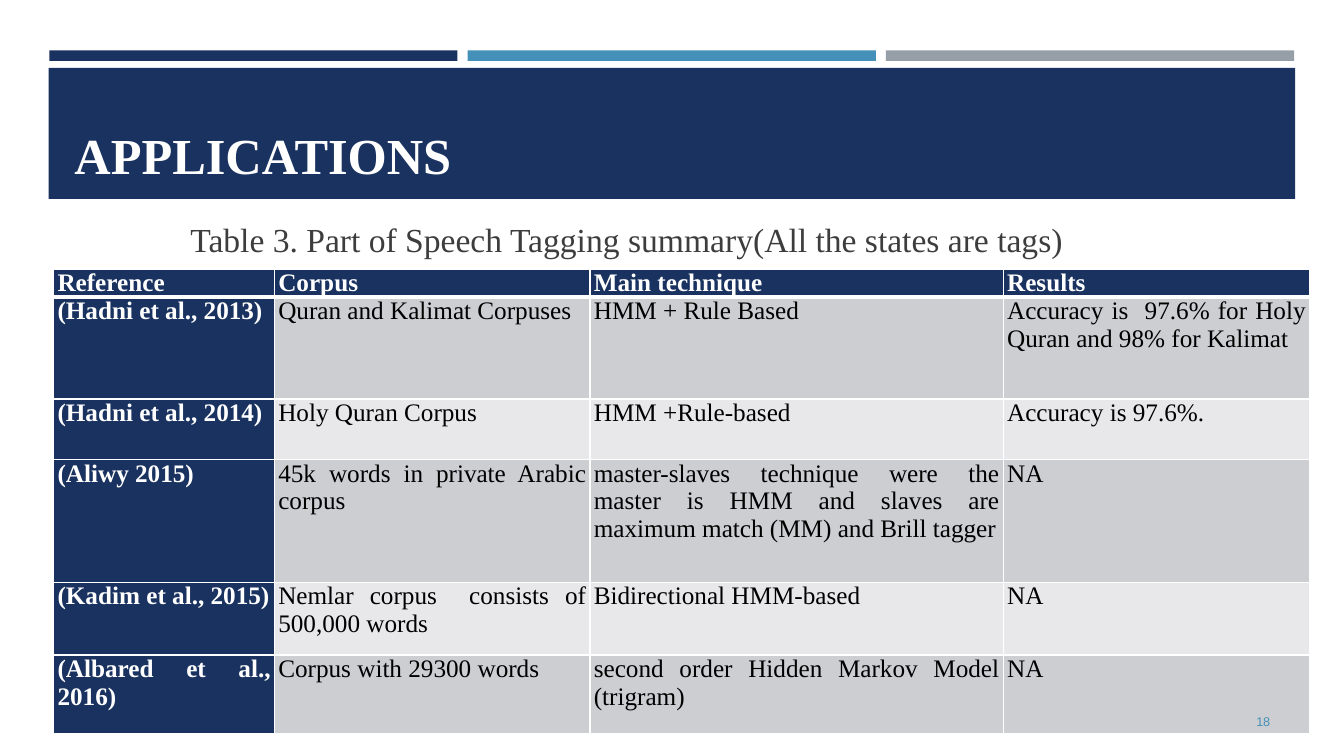
"""Build the slide that summarises part-of-speech tagging applications."""
from dataclasses import dataclass

import pptx
import pptx.dml.color
import pptx.enum.shapes
import pptx.enum.text
import pptx.oxml
import pptx.oxml.ns
import pptx.presentation
import pptx.slide
import pptx.table
import pptx.text.text
import pptx.util

Pt = pptx.util.Pt
RGBColor = pptx.dml.color.RGBColor
Align = pptx.enum.text.PP_ALIGN
Anchor = pptx.enum.text.MSO_ANCHOR

NAVY = RGBColor(0x1A, 0x32, 0x60)
BLUE = RGBColor(0x45, 0x90, 0xB8)
GREY = RGBColor(0x96, 0x9F, 0xA7)
DARK_GREY = RGBColor(0x3D, 0x3D, 0x3D)
BAND_DARK = RGBColor(0xCD, 0xCE, 0xD2)
BAND_LIGHT = RGBColor(0xE8, 0xE8, 0xEA)
WHITE = RGBColor(0xFF, 0xFF, 0xFF)
BLACK = RGBColor(0, 0, 0)
SERIF = "Times New Roman"


@dataclass(frozen=True)
class Box:
    """Position and size in points."""

    left: float
    top: float
    width: float
    height: float

    def lengths(self) -> tuple[pptx.util.Length, ...]:
        """Return the four values as lengths."""
        return Pt(self.left), Pt(self.top), Pt(self.width), Pt(self.height)


@dataclass(frozen=True)
class Block:
    """A filled rectangle."""

    box: Box
    color: RGBColor


STRIPE_LEFT, STRIPE_WIDTH, STRIPE_STEP = 35.2, 291.6, 298.8
BLOCKS = [
    Block(Box(STRIPE_LEFT + index * STRIPE_STEP, 36, STRIPE_WIDTH, 7.6), color)
    for index, color in enumerate((NAVY, BLUE, GREY))
] + [Block(Box(34.8, 48.5, 890.4, 93.6), NAVY)]

TABLE_BOX = Box(38.4, 192.4, 897.2, 327.5)
COLUMN_WIDTHS = [157.7, 225.4, 295.2, 218.9]
ROW_HEIGHTS = [15.8, 72.7, 43.2, 87.8, 51.8, 56.2]
ROWS = [
    ("Reference", "Corpus", "Main technique", "Results"),
    ("(Hadni et al., 2013)", "Quran and Kalimat Corpuses", "HMM + Rule Based",
     "Accuracy is  97.6% for Holy Quran and 98% for Kalimat"),
    ("(Hadni et al., 2014)", "Holy Quran Corpus", "HMM +Rule-based", "Accuracy is 97.6%."),
    ("(Aliwy 2015)", "45k words in private Arabic corpus",
     "master-slaves technique were the master is HMM and slaves are "
     "maximum match (MM) and Brill tagger", "NA"),
    ("(Kadim et al., 2015)", "Nemlar corpus  consists of 500,000 words",
     "Bidirectional HMM-based", "NA"),
    ("(Albared et al., 2016)", "Corpus with 29300 words",
     "second order Hidden Markov Model (trigram)", "NA"),
]


def write_text(frame: pptx.text.text.TextFrame, text: str, *, size: float, color: RGBColor,
               font: str = SERIF, bold: bool = False, align: Align = Align.LEFT,
               space_after: float = 0) -> None:
    """Write one formatted paragraph into a text frame."""
    frame.word_wrap = True
    paragraph = frame.paragraphs[0]
    paragraph.alignment = align
    paragraph.space_after = Pt(space_after)
    run = paragraph.add_run()
    run.text = text
    run.font.name = font
    run.font.size = Pt(size)
    run.font.bold = bold
    run.font.color.rgb = color


def add_block(slide: pptx.slide.Slide, block: Block) -> None:
    """Draw a filled rectangle without outline."""
    shape = slide.shapes.add_shape(
        pptx.enum.shapes.MSO_SHAPE.RECTANGLE, *block.box.lengths())
    shape.shadow.inherit = False
    shape.fill.solid()
    shape.fill.fore_color.rgb = block.color
    shape.line.fill.background()


def add_text_box(slide: pptx.slide.Slide, box: Box, anchor: Anchor) -> pptx.text.text.TextFrame:
    """Add an empty text box and return its frame."""
    frame = slide.shapes.add_textbox(*box.lengths()).text_frame
    frame.vertical_anchor = anchor
    return frame


def set_borders(cell: pptx.table._Cell, top: float, bottom: float) -> None:
    """Give a cell white borders, one point wide at the sides."""
    properties = cell._tc.get_or_add_tcPr()
    for side, width in (("L", 1), ("R", 1), ("T", top), ("B", bottom)):
        properties.append(pptx.oxml.parse_xml(
            f'<a:ln{side} {pptx.oxml.ns.nsdecls("a")} w="{Pt(width)}">'
            f'<a:solidFill><a:srgbClr val="{WHITE}"/></a:solidFill></a:ln{side}>'))


def add_summary_table(slide: pptx.slide.Slide) -> None:
    """Draw the table with navy headings and banded body rows."""
    table = slide.shapes.add_table(
        len(ROWS), len(COLUMN_WIDTHS), *TABLE_BOX.lengths()).table
    for column, width in zip(table.columns, COLUMN_WIDTHS):
        column.width = Pt(width)
    for row_index, (row, height, texts) in enumerate(zip(table.rows, ROW_HEIGHTS, ROWS)):
        row.height = Pt(height)
        band = BAND_DARK if row_index % 2 else BAND_LIGHT
        for column_index, (cell, text) in enumerate(zip(row.cells, texts)):
            heading = row_index == 0 or column_index == 0
            cell.margin_left = cell.margin_right = Pt(2.7)
            cell.margin_top = cell.margin_bottom = Pt(0)
            set_borders(cell, top=3 if row_index == 1 else 1, bottom=3 if row_index == 0 else 1)
            cell.fill.solid()
            cell.fill.fore_color.rgb = NAVY if heading else band
            write_text(cell.text_frame, text, size=18, bold=heading,
                       color=WHITE if heading else BLACK, align=Align.JUSTIFY)


def main() -> None:
    """Build and save the presentation."""
    presentation = pptx.Presentation()
    presentation.slide_width, presentation.slide_height = Pt(960), Pt(540)
    slide = presentation.slides.add_slide(presentation.slide_layouts[6])
    for block in BLOCKS:
        add_block(slide, block)
    add_summary_table(slide)
    number = add_text_box(slide, Box(831.6, 501.1, 82.8, 28.8), Anchor.MIDDLE)
    write_text(number, "18", size=9, color=BLUE, font="Arial", align=Align.RIGHT)
    title = add_text_box(slide, Box(46.1, 55.4, 868.3, 79.9), Anchor.BOTTOM)
    write_text(title, "APPLICATIONS", size=36, color=WHITE, bold=True)
    caption = add_text_box(slide, Box(128.9, 152.6, 800, 36), Anchor.TOP)
    write_text(caption, "Table 3. Part of Speech Tagging summary(All the states are tags)",
               size=24, color=DARK_GREY, space_after=10)
    presentation.save("out.pptx")


if __name__ == "__main__":
    main()
